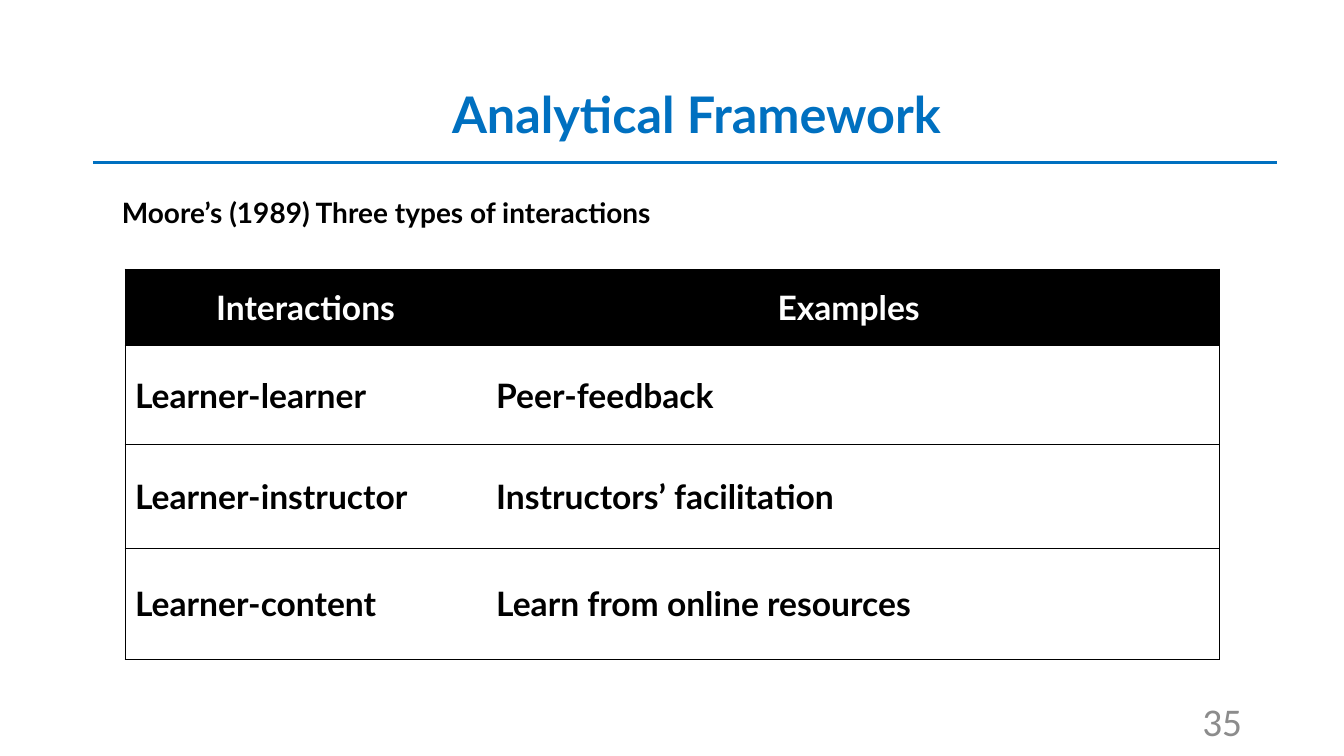
import pptx
import pptx.dml.color
import pptx.enum.shapes
import pptx.enum.text
import pptx.oxml
import pptx.oxml.ns
import pptx.util
from pptx.util import Cm

BLUE = pptx.dml.color.RGBColor(0x00, 0x70, 0xC0)
BLACK = pptx.dml.color.RGBColor(0x00, 0x00, 0x00)
WHITE = pptx.dml.color.RGBColor(0xFF, 0xFF, 0xFF)
GREY = pptx.dml.color.RGBColor(0x8C, 0x8C, 0x8C)

ALIGN = pptx.enum.text.PP_ALIGN
ANCHOR = pptx.enum.text.MSO_ANCHOR

INTERACTIONS = [
    ("Interactions", "Examples "),
    ("Learner-learner", "Peer-feedback"),
    ("Learner-instructor", "Instructors’ facilitation"),
    ("Learner-content", "Learn from online resources"),
]
COLUMN_SHARES = (0.33, 0.67)
ROW_HEIGHTS = (1.93, 2.49, 2.62, 2.79)


def style_paragraph(para, size, color, align=ALIGN.LEFT, name="Lato", bold=True):
    para.alignment = align
    para.font.name = name
    para.font.size = pptx.util.Pt(size)
    para.font.bold = bold
    para.font.color.rgb = color


def add_label(page, box, text, anchor, size, color, **style):
    frame = page.shapes.add_textbox(*box).text_frame
    frame.word_wrap = True
    frame.vertical_anchor = anchor
    para = frame.paragraphs[0]
    para.text = text
    style_paragraph(para, size, color, **style)
    return para


def add_heading(page, left, top, width, height):
    # Title, with a rule across the page beneath it
    title = add_label(page, (left, top, width, height), "Analytical Framework",
                      ANCHOR.MIDDLE, 36, BLUE, align=ALIGN.CENTER)
    title.line_spacing = 0.9
    rule_top = top + Cm(2.97)
    rule = page.shapes.add_connector(
        pptx.enum.shapes.MSO_CONNECTOR.STRAIGHT,
        left + Cm(0.56), rule_top, left + width - Cm(1.15), rule_top)
    rule.line.color.rgb = BLUE
    rule.line.width = pptx.util.Pt(2)
    properties = rule._element.spPr
    properties.append(pptx.oxml.parse_xml(
        f"<a:effectLst {pptx.oxml.ns.nsdecls('a')}/>"))


def set_borders(cell, sides):
    # Sides left out get no line
    properties = cell._tc.get_or_add_tcPr()
    for side in "LRTB":
        paint = (f'<a:solidFill><a:srgbClr val="{str(BLACK)}"/></a:solidFill>'
                 if side in sides else "<a:noFill/>")
        properties.append(pptx.oxml.parse_xml(
            f'<a:ln{side} {pptx.oxml.ns.nsdecls("a")} w="6350">{paint}</a:ln{side}>'))


def add_interactions_table(page, left, top, width, height):
    table = page.shapes.add_table(len(INTERACTIONS), len(COLUMN_SHARES),
                                  left, top, width, height).table
    table.first_row = table.horz_banding = False
    for column, share in zip(table.columns, COLUMN_SHARES):
        column.width = int(width * share)
    for row, row_height in zip(table.rows, ROW_HEIGHTS):
        row.height = int(height * row_height / sum(ROW_HEIGHTS))

    for row_index, texts in enumerate(INTERACTIONS):
        is_header = row_index == 0
        for column_index, text in enumerate(texts):
            cell = table.cell(row_index, column_index)
            set_borders(cell, "TB" + "LR"[column_index])
            cell.fill.solid()
            cell.fill.fore_color.rgb = BLACK if is_header else WHITE
            cell.vertical_anchor = ANCHOR.MIDDLE
            para = cell.text_frame.paragraphs[0]
            para.text = text
            style_paragraph(para, 24, WHITE if is_header else BLACK,
                            align=ALIGN.CENTER if is_header else ALIGN.LEFT)


def build_framework_page(deck):
    page = deck.slides.add_slide(deck.slide_layouts[6])
    add_heading(page, Cm(1.78), Cm(1.12), Cm(31.55), Cm(3.68))
    # Line that introduces the table
    add_label(page, (Cm(2.82), Cm(4.8), Cm(28.96), Cm(1.12)),
              "Moore’s (1989) Three types of interactions", ANCHOR.TOP, 20, BLACK)
    add_interactions_table(page, Cm(3.15), Cm(6.78), Cm(27.58), Cm(9.83))
    # Page number
    add_label(page, (Cm(23.93), Cm(17.65), Cm(7.62), Cm(1.02)), "35",
              ANCHOR.MIDDLE, 28, GREY, align=ALIGN.RIGHT, name="Calibri", bold=False)


def main():
    deck = pptx.Presentation()
    deck.slide_width, deck.slide_height = Cm(33.87), Cm(19.05)
    build_framework_page(deck)
    deck.save("out.pptx")


if __name__ == "__main__":
    main()
